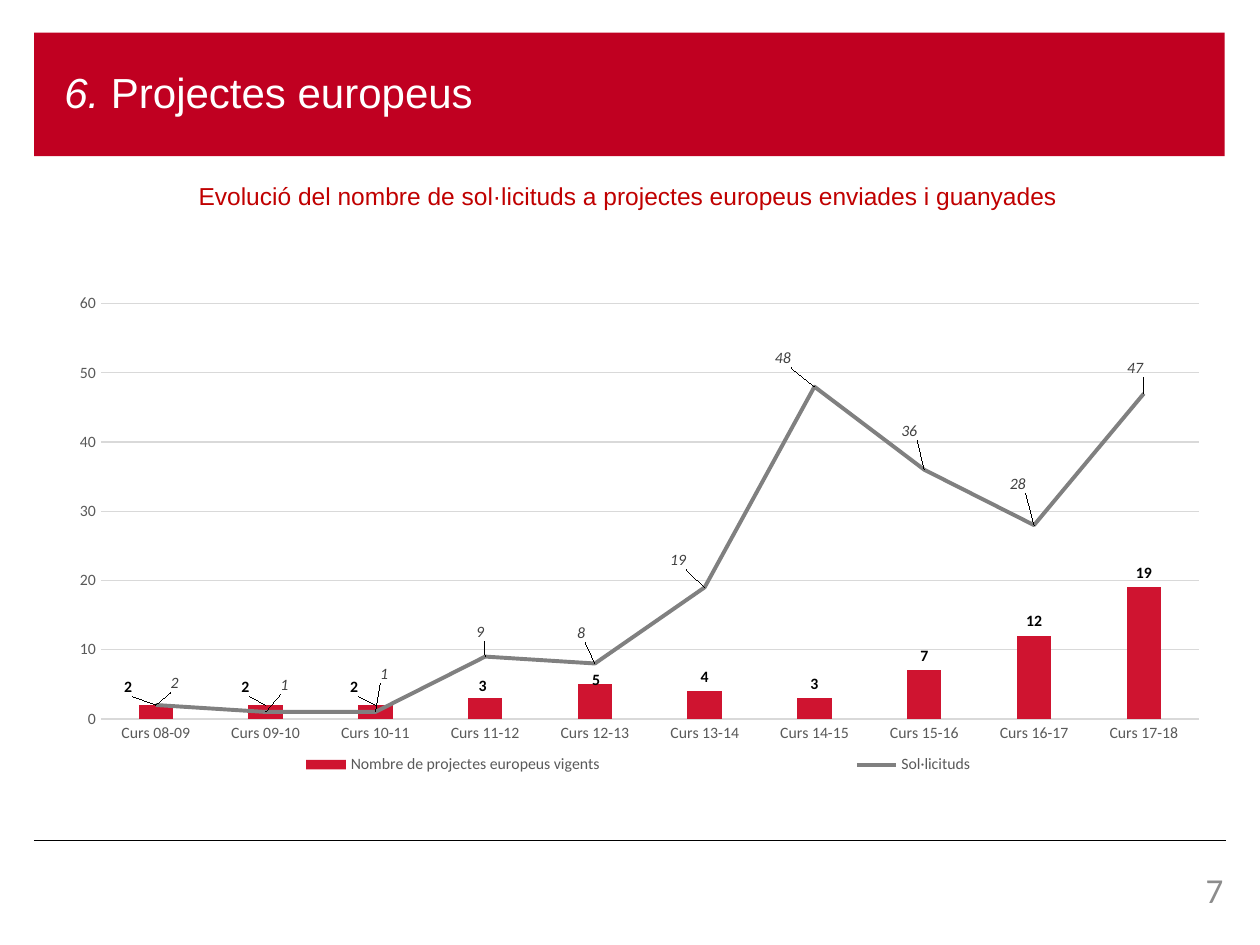
from lxml import etree
from pptx import Presentation
from pptx.chart.data import CategoryChartData
from pptx.dml.color import RGBColor
from pptx.enum.chart import XL_CHART_TYPE, XL_LABEL_POSITION, XL_LEGEND_POSITION, XL_MARKER_STYLE, XL_TICK_MARK
from pptx.enum.shapes import MSO_CONNECTOR, MSO_SHAPE
from pptx.enum.text import MSO_ANCHOR, MSO_AUTO_SIZE, PP_ALIGN
from pptx.oxml import parse_xml
from pptx.oxml.ns import nsdecls, qn
from pptx.util import Inches, Pt

CHART_WIDTH, CHART_HEIGHT = 9.27, 4.02
COURSES = [f"Curs {year:02d}-{year + 1:02d}" for year in range(8, 18)]
PROJECTS = [2, 2, 2, 3, 5, 4, 3, 7, 12, 19]
APPLICATIONS = [2, 1, 1, 9, 8, 19, 48, 36, 28, 47]
PROJECT_SHIFTS = [(-0.22, -0.03), (-0.16, -0.03), (-0.17, -0.03), (-0.02, 0.02), (0.01, 0.08)]
APPLICATION_SHIFTS = [
    (0.15, -0.06), (0.15, -0.1), (0.07, -0.19), (-0.04, -0.08), (-0.11, -0.13),
    (-0.21, -0.1), (-0.25, -0.11), (-0.12, -0.19), (-0.13, -0.21), (-0.07, -0.09),
]


def color(hex_string):
    """Return the colour for a hex string."""
    return RGBColor.from_string(hex_string)


def style_font(font, name, size, hex_color, bold=None, italic=None):
    """Set the face, size, colour and style of a font."""
    font.name, font.size, font.bold, font.italic = name, Pt(size), bold, italic
    font.color.rgb = color(hex_color)


def style_line(line, hex_color, width):
    """Set the colour and width of a line."""
    line.color.rgb = color(hex_color)
    line.width = Pt(width)


def add_banner(slide):
    """Add the red title band with its number in italics."""
    shape = slide.shapes.add_shape(
        MSO_SHAPE.RECTANGLE, Inches(0.27), Inches(0.26), Inches(9.45), Inches(0.98))
    shape.shadow.inherit = False
    shape.fill.solid()
    shape.fill.fore_color.rgb = color("C00021")
    shape.line.fill.background()
    text_frame = shape.text_frame
    text_frame.margin_left = Inches(0.24)
    text_frame.vertical_anchor = MSO_ANCHOR.MIDDLE
    paragraph = text_frame.paragraphs[0]
    paragraph.alignment = PP_ALIGN.LEFT
    paragraph.line_spacing = 0.9
    for text, italic in (("6.", True), (" Projectes europeus", False)):
        run = paragraph.add_run()
        run.text = text
        style_font(run.font, "Arial", 24, "FFFFFF", italic=italic)


def add_text(slide, text, box, alignment, name, size, hex_color):
    """Add a wrapping text box and return its text frame."""
    text_frame = slide.shapes.add_textbox(*map(Inches, box)).text_frame
    text_frame.word_wrap = True
    text_frame.text = text
    paragraph = text_frame.paragraphs[0]
    paragraph.alignment = alignment
    style_font(paragraph.runs[0].font, name, size, hex_color)
    return text_frame


def add_rule(slide):
    """Add the thin line above the footer."""
    connector = slide.shapes.add_connector(
        MSO_CONNECTOR.STRAIGHT, Inches(0.27), Inches(6.67), Inches(9.73), Inches(6.67))
    style_line(connector.line, "000000", 0.5)
    etree.SubElement(connector._element.spPr, qn("a:effectLst"))


def make_layout(x, y, width=None, height=None, inner=False):
    """Return a manual chart layout in fractions of the chart."""
    parts = '<c:layoutTarget val="inner"/>' if inner else ""
    if width is not None:
        parts += '<c:xMode val="edge"/><c:yMode val="edge"/>'
    for tag, value in (("x", x), ("y", y), ("w", width), ("h", height)):
        if value is not None:
            parts += f'<c:{tag} val="{value:.4f}"/>'
    return parse_xml(
        f'<c:layout {nsdecls("c")}><c:manualLayout>{parts}</c:manualLayout></c:layout>')


def label_series(series, position, shifts, **style):
    """Show the values of a series and shift its labels by inches."""
    labels = series.data_labels
    labels.show_value = True
    labels.position = position
    style_font(labels.font, "Calibri", 9, **style)
    for index, (right, down) in enumerate(shifts):
        label = series.points[index].data_label
        label.position = position
        style_font(label.font, "Calibri", 9, **style)
        element = series._element.xpath(f"c:dLbls/c:dLbl[c:idx/@val={index}]")[0]
        element.insert(1, make_layout(right / CHART_WIDTH, down / CHART_HEIGHT))


def move_to_line(chart):
    """Turn the second column series into a line on the same axes."""
    bar_chart = chart.plots[0]._element
    series = bar_chart.findall(qn("c:ser"))[1]
    for element in series.findall(qn("c:invertIfNegative")):
        series.remove(element)
    line_chart = parse_xml(
        f'<c:lineChart {nsdecls("c")}><c:grouping val="standard"/>'
        '<c:varyColors val="0"/><c:marker val="1"/></c:lineChart>')
    line_chart.insert(2, series)
    for axis in bar_chart.findall(qn("c:axId")):
        etree.SubElement(line_chart, qn("c:axId")).set("val", axis.get("val"))
    bar_chart.addnext(line_chart)


def style_axes(chart):
    """Format both axes and the horizontal grid."""
    for axis in (chart.category_axis, chart.value_axis):
        axis.major_tick_mark = axis.minor_tick_mark = XL_TICK_MARK.NONE
        style_font(axis.tick_labels.font, "Calibri", 9, "595959")
    style_line(chart.category_axis.format.line, "D9D9D9", 0.75)
    axis = chart.value_axis
    axis.minimum_scale, axis.maximum_scale, axis.major_unit = 0, 60, 10
    axis.format.line.fill.background()
    style_line(axis.major_gridlines.format.line, "D9D9D9", 0.75)


def style_legend(chart):
    """Spread the legend over the bottom of the chart."""
    chart.has_legend = True
    legend = chart.legend
    legend.position = XL_LEGEND_POSITION.BOTTOM
    legend.include_in_layout = False
    style_font(legend.font, "Calibri", 9, "595959")
    for layout in legend._element.findall(qn("c:layout")):
        legend._element.remove(layout)
    legend._element.find(qn("c:legendPos")).addnext(make_layout(0, 0.92, 1, 0.06))


def add_projects_chart(slide):
    """Add the chart of running projects and applications."""
    data = CategoryChartData()
    data.categories = COURSES
    data.add_series("Nombre de projectes europeus vigents", PROJECTS)
    data.add_series("Sol·licituds", APPLICATIONS)
    chart = slide.shapes.add_chart(
        XL_CHART_TYPE.COLUMN_CLUSTERED, Inches(0.43), Inches(2.25),
        Inches(CHART_WIDTH), Inches(CHART_HEIGHT), data).chart
    chart.has_title = False
    style_font(chart.font, "Calibri", 10, "000000")
    move_to_line(chart)
    bar_plot, line_plot = chart.plots
    bar_plot.vary_by_categories = False
    bar_plot.gap_width, bar_plot.overlap = 219, -27
    projects, applications = bar_plot.series[0], line_plot.series[0]
    projects.format.fill.solid()
    projects.format.fill.fore_color.rgb = color("CF1430")
    style_line(applications.format.line, "808080", 2.25)
    applications.marker.style = XL_MARKER_STYLE.NONE
    applications.smooth = False
    label_series(projects, XL_LABEL_POSITION.OUTSIDE_END, PROJECT_SHIFTS,
                 hex_color="000000", bold=True)
    label_series(applications, XL_LABEL_POSITION.ABOVE, APPLICATION_SHIFTS,
                 hex_color="404040", italic=True)
    style_axes(chart)
    style_legend(chart)
    plot_area = chart._chartSpace.chart.plotArea
    for layout in plot_area.findall(qn("c:layout")):
        plot_area.remove(layout)
    plot_area.insert(0, make_layout(0.04, 0.04, 0.94, 0.82, inner=True))


def main():
    """Build the slide and save it."""
    presentation = Presentation()
    presentation.slide_width, presentation.slide_height = Inches(10), Inches(7.5)
    slide = presentation.slides.add_slide(presentation.slide_layouts[6])
    add_rule(slide)
    add_banner(slide)
    subtitle = add_text(
        slide, "Evolució del nombre de sol·licituds a projectes europeus enviades i guanyades",
        (0.27, 1.39, 9.43, 0.34), PP_ALIGN.CENTER, "Arial", 14, "C00000")
    subtitle.auto_size = MSO_AUTO_SIZE.SHAPE_TO_FIT_TEXT
    number = add_text(
        slide, "7", (8.98, 6.89, 0.73, 0.4), PP_ALIGN.RIGHT, "Calibri", 20, "8C8C8C")
    number.margin_left = number.margin_right = number.margin_top = number.margin_bottom = 0
    add_projects_chart(slide)
    presentation.save("out.pptx")


if __name__ == "__main__":
    main()
